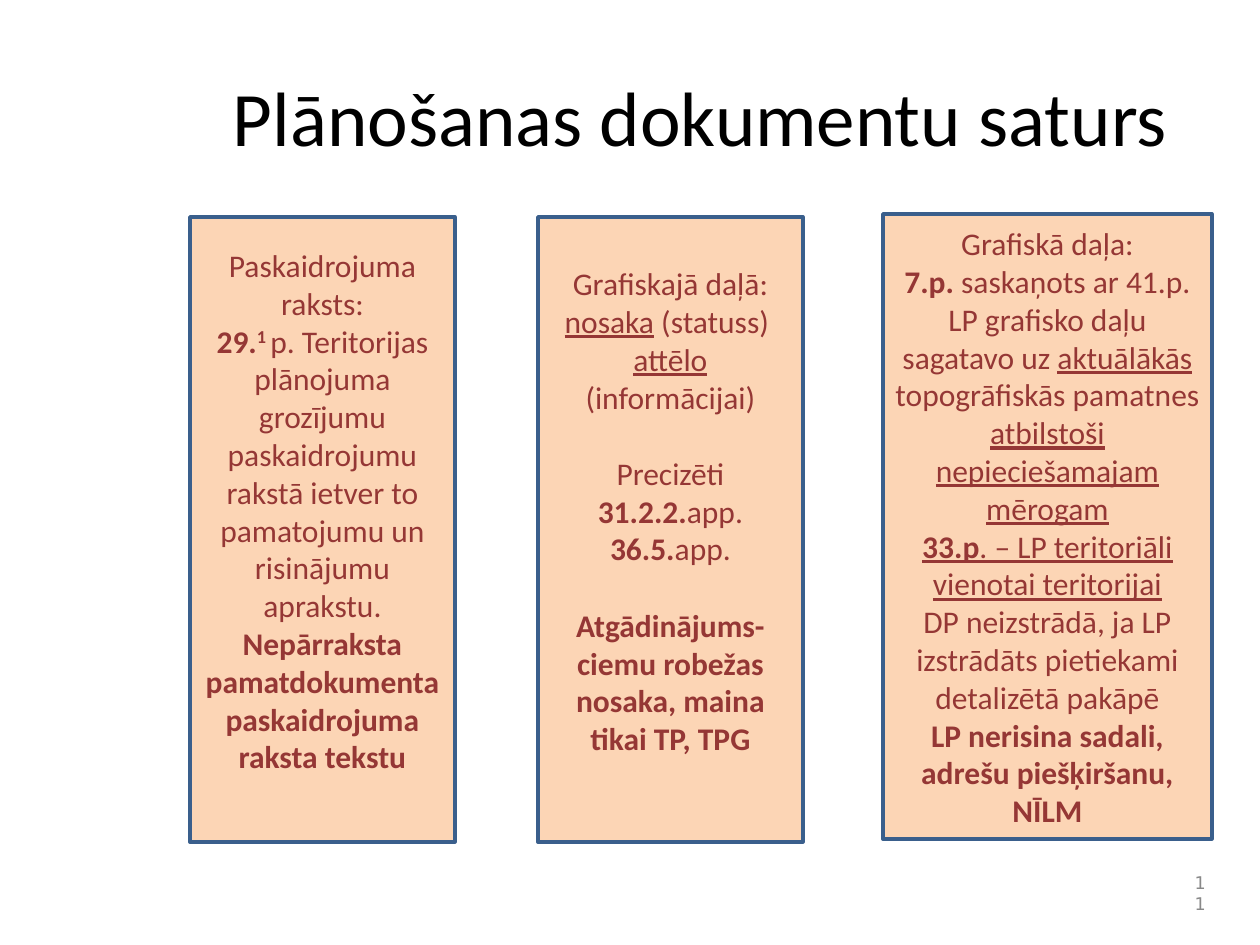
import pptx
import pptx.dml.color
import pptx.enum.shapes
import pptx.enum.text
import pptx.util

PIXELS_PER_INCH = 126
LINE_GAP = 22
PANEL_TEXT = "953735"

EXPLANATION = [
    (0, [("Paskaidrojuma raksts:", "")]),
    (0, [("29.", "b"), ("1 ", "bs"),
         ("p. Teritorijas plānojuma grozījumu paskaidrojumu rakstā ietver to "
          "pamatojumu un risinājumu aprakstu.", "")]),
    (0, [("Nepārraksta pamatdokumenta paskaidrojuma raksta tekstu", "b")]),
]
GRAPHIC_STATUS = [
    (0, [("Grafiskajā daļā:", "")]),
    (0, [("nosaka", "u"), (" (statuss) ", "")]),
    (0, [("attēlo", "u"), (" (informācijai)", "")]),
    (LINE_GAP, [("Precizēti ", ""), ("31.2.2.", "b"), ("app.", "")]),
    (0, [("36.5.", "b"), ("app.", "")]),
    (LINE_GAP, [("Atgādinājums- ciemu robežas nosaka, maina tikai TP, TPG", "b")]),
]
GRAPHIC_RULES = [
    (0, [("Grafiskā daļa:", "")]),
    (0, [("7.p. ", "b"), ("saskaņots ar 41.p.", "")]),
    (0, [("LP grafisko daļu sagatavo uz ", ""), ("aktuālākās ", "u"),
         ("topogrāfiskās pamatnes ", ""),
         ("atbilstoši nepieciešamajam mērogam", "u")]),
    (0, [("33.p", "bu"), (". – LP teritoriāli vienotai teritorijai", "u")]),
    (0, [("DP neizstrādā, ja LP izstrādāts pietiekami detalizētā pakāpē", "")]),
    (0, [("LP nerisina sadali, adrešu piešķiršanu, NĪLM", "b")]),
]


def px(length):
    return pptx.util.Emu(round(length * 914400 / PIXELS_PER_INCH))


def color(hex_string):
    return pptx.dml.color.RGBColor.from_string(hex_string)


def add_run(paragraph, text, *, size, fill, font="Calibri", style=""):
    run = paragraph.add_run()
    run.text = text
    run.font.name = font
    run.font.size = pptx.util.Pt(size)
    run.font.color.rgb = color(fill)
    run.font.bold = "b" in style
    run.font.underline = "u" in style
    if "s" in style:
        run._r.get_or_add_rPr().set("baseline", "30000")


def write_text(shape, paragraphs, *, align="CENTER", bottom_inset=6, **run_format):
    frame = shape.text_frame
    frame.word_wrap = True
    frame.auto_size = pptx.enum.text.MSO_AUTO_SIZE.NONE
    frame.vertical_anchor = pptx.enum.text.MSO_ANCHOR.MIDDLE
    frame.margin_bottom = px(bottom_inset)
    for index, (space_before, runs) in enumerate(paragraphs):
        paragraph = frame.add_paragraph() if index else frame.paragraphs[0]
        paragraph.alignment = getattr(pptx.enum.text.PP_ALIGN, align)
        paragraph.space_before = pptx.util.Pt(space_before)
        for text, style in runs:
            add_run(paragraph, text, style=style, **run_format)


def add_title(slide, text, left, top, width, height):
    title = slide.shapes.title
    title.left, title.top, title.width, title.height = map(px, (left, top, width, height))
    write_text(title, [(0, [(text, "")])], size=44, fill="000000")


def add_panel(slide, paragraphs, left, top, width, height, bottom_inset):
    shape = slide.shapes.add_shape(
        pptx.enum.shapes.MSO_SHAPE.RECTANGLE, *map(px, (left, top, width, height)))
    shape.shadow.inherit = False
    shape.fill.solid()
    shape.fill.fore_color.rgb = color("FCD5B5")
    shape.line.color.rgb = color("3A5F8C")
    shape.line.width = pptx.util.Pt(2)
    write_text(shape, paragraphs, size=18, fill=PANEL_TEXT, bottom_inset=bottom_inset)


def add_page_number(slide, number, left, top, width, height):
    box = slide.shapes.add_textbox(*map(px, (left, top, width, height)))
    write_text(box, [(0, [(number, "")])], align="RIGHT", size=10,
               fill="898989", font="DejaVu Sans")


def main():
    presentation = pptx.Presentation()
    presentation.slide_width = px(1260)
    presentation.slide_height = px(945)
    slide = presentation.slides.add_slide(presentation.slide_layouts[5])
    add_title(slide, "Plānošanas dokumentu saturs", 203, 37, 995, 158)
    add_panel(slide, EXPLANATION, 190, 217, 265, 625, 44)
    add_panel(slide, GRAPHIC_STATUS, 538, 217, 265, 625, 44)
    add_panel(slide, GRAPHIC_RULES, 883, 214, 329, 625, 6)
    add_page_number(slide, "11", 1176, 872, 42, 42)
    presentation.save("out.pptx")


if __name__ == "__main__":
    main()
